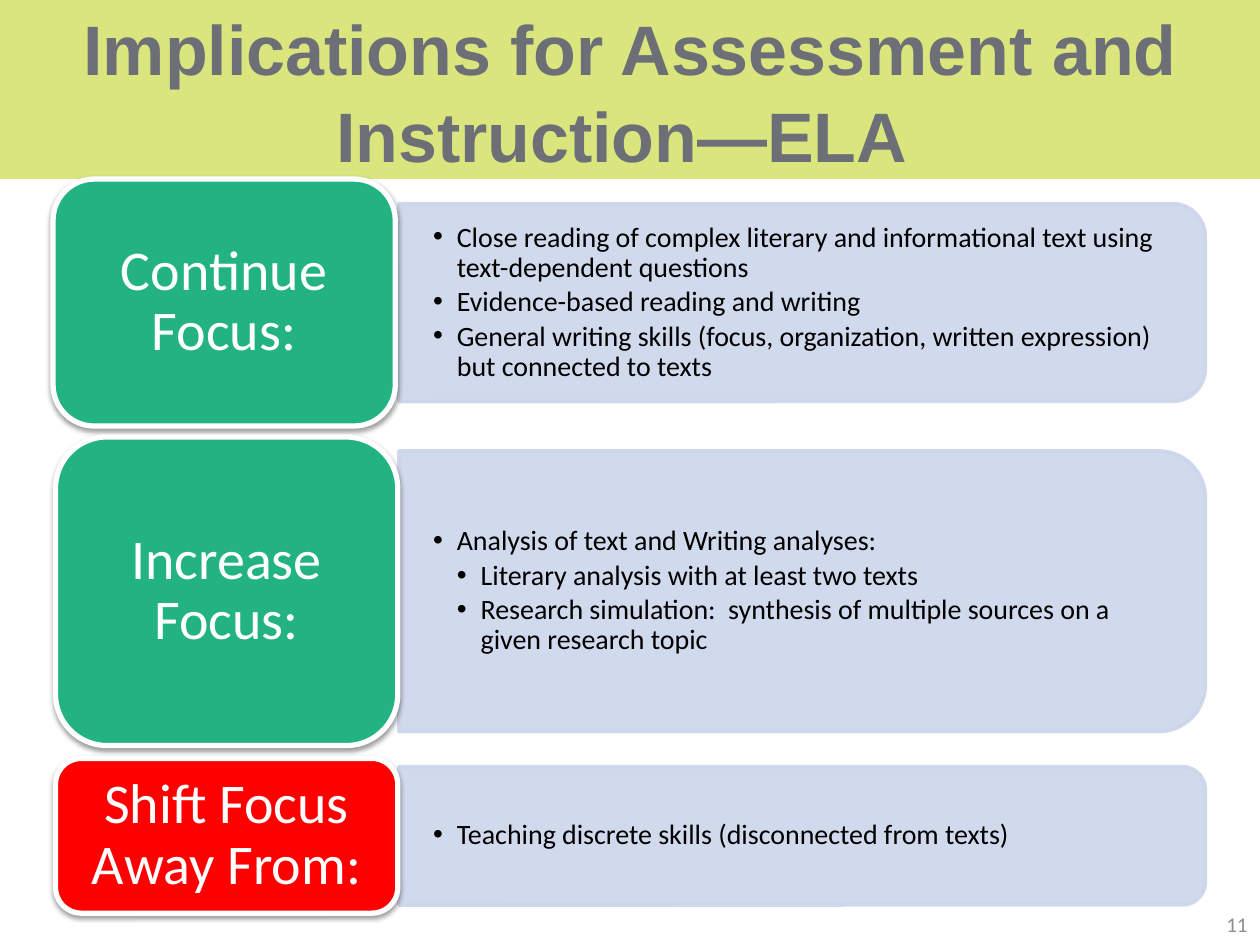
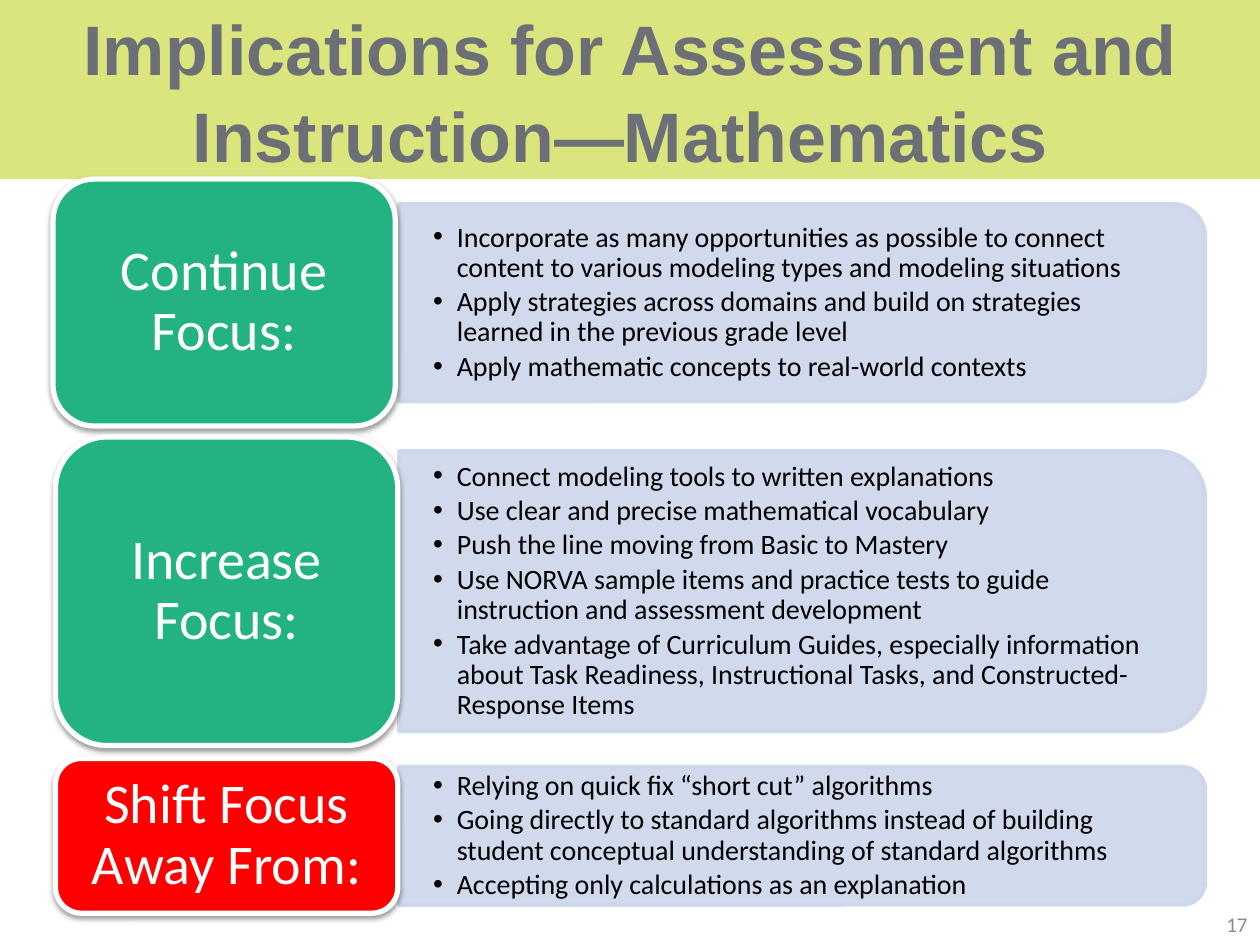
from lxml import etree
from pptx import Presentation
from pptx.dml.color import RGBColor
from pptx.enum.shapes import MSO_SHAPE
from pptx.enum.text import MSO_ANCHOR, MSO_AUTO_SIZE, PP_ALIGN
from pptx.oxml.ns import qn
from pptx.util import Cm, Pt

RECTANGLE = MSO_SHAPE.RECTANGLE
ROUNDED = MSO_SHAPE.ROUNDED_RECTANGLE
TOP_ROUNDED = MSO_SHAPE.ROUND_2_SAME_RECTANGLE
MIDDLE = MSO_ANCHOR.MIDDLE
NO_AUTOFIT = MSO_AUTO_SIZE.NONE
CENTER, RIGHT, LEFT = PP_ALIGN.CENTER, PP_ALIGN.RIGHT, PP_ALIGN.LEFT

COLORS = {
    "band": "DAE57E", "title": "6D6F77", "number": "8C8C8C", "panel": "CCD5EA",
    "keep": "23B383", "drop": "FF0000", "white": "FFFFFF", "black": "000000",
}
FONTS = {
    "title": {"name": "Arial", "size": Pt(40), "bold": True, "color": "title"},
    "number": {"name": "Calibri", "size": Pt(12), "bold": False, "color": "number"},
    "card": {"name": "Calibri", "size": Pt(32), "bold": False, "color": "white"},
    "bullet": {"name": "Calibri", "size": Pt(16), "bold": False, "color": "black"},
}
PARAGRAPHS = {
    "title": {"alignment": CENTER, "line_spacing": 1.04},
    "number": {"alignment": RIGHT},
    "card": {"alignment": CENTER, "line_spacing": 0.9},
    "bullet": {"alignment": LEFT, "line_spacing": 0.9, "space_after": Pt(2.4)},
}

SLIDE_WIDTH, SLIDE_HEIGHT = 25.4, 19.05
TITLE_BOX = (0, 0, SLIDE_WIDTH, 3.61)
NUMBER_BOX = (19.48, 18.21, 5.92, 0.84)
CARD_WIDTH, PANEL_WIDTH = 6.9, 16.26
CORNER_INSET = 0.05
BULLET_INDENT = 0.48

ROWS = [
    {"label": "Continue Focus:", "color": "keep", "box": (1.07, 3.61, 23.23, 4.98), "panel_height": 3.99},
    {"label": "Increase Focus:", "color": "keep", "box": (1.12, 8.81, 23.18, 6.22), "panel_height": 5.66},
    {"label": "Shift Focus Away From:", "color": "drop", "box": (1.12, 15.29, 23.18, 3.12), "panel_height": 2.79},
]

SLIDES = [
    {
        "title": "Implications for Assessment and Instruction—ELA ",
        "number": "11",
        "bullets": [
            [
                (1, "Close reading of complex literary and informational text using text-dependent questions"),
                (1, "Evidence-based reading and writing"),
                (1, "General writing skills (focus, organization, written expression) but connected to texts"),
            ],
            [
                (1, "Analysis of text and Writing analyses:"),
                (2, "Literary analysis with at least two texts"),
                (2, "Research simulation:  synthesis of multiple sources on a given research topic"),
            ],
            [(1, "Teaching discrete skills (disconnected from texts)")],
        ],
    },
    {
        "title": "Implications for Assessment and Instruction—Mathematics ",
        "number": "17",
        "bullets": [
            [
                (1, "Incorporate as many opportunities as possible to connect content to various "
                    "modeling types and modeling situations"),
                (1, "Apply strategies across domains and build on strategies learned in the previous grade level"),
                (1, "Apply mathematic concepts to real-world contexts"),
            ],
            [
                (1, "Connect modeling tools to written explanations"),
                (1, "Use clear and precise mathematical vocabulary"),
                (1, "Push the line moving from Basic to Mastery"),
                (1, "Use NORVA sample items and practice tests to guide instruction and assessment development"),
                (1, "Take advantage of Curriculum Guides, especially information about Task Readiness, "
                    "Instructional Tasks, and Constructed-Response Items"),
            ],
            [
                (1, "Relying on quick fix “short cut” algorithms"),
                (1, "Going directly to standard algorithms instead of building student conceptual "
                    "understanding of standard algorithms"),
                (1, "Accepting only calculations as an explanation"),
            ],
        ],
    },
]


def rgb(name):
    return RGBColor.from_string(COLORS[name])


def to_cm(box):
    return [Cm(value) for value in box]


def set_attributes(target, values):
    for name, value in values.items():
        setattr(target, name, value)


def add_xml(parent, tag, **attributes):
    return etree.SubElement(parent, qn(tag), attributes)


def write_paragraph(paragraph, text, style):
    set_attributes(paragraph, PARAGRAPHS[style])
    run = paragraph.add_run()
    run.text = text
    font = dict(FONTS[style])
    run.font.color.rgb = rgb(font.pop("color"))
    set_attributes(run.font, font)


def format_frame(frame, inset_x=0.25, inset_y=0.13):
    set_attributes(frame, {
        "word_wrap": True, "auto_size": NO_AUTOFIT, "vertical_anchor": MIDDLE,
        "margin_left": Cm(inset_x), "margin_right": Cm(inset_x),
        "margin_top": Cm(inset_y), "margin_bottom": Cm(inset_y),
    })


def add_filled_shape(slide, kind, box, fill, line=None, line_width=0):
    shape = slide.shapes.add_shape(kind, *to_cm(box))
    shape.shadow.inherit = False
    shape.fill.solid()
    shape.fill.fore_color.rgb = rgb(fill)
    if line:
        shape.line.color.rgb = rgb(line)
        shape.line.width = Pt(line_width)
    else:
        shape.line.fill.background()
    return shape


def add_layout_band(slide):
    band = add_filled_shape(slide, RECTANGLE, TITLE_BOX, "band")
    slide.slide_layout.shapes.element.insert(2, band.element)


def place_title(slide, text, box):
    title = slide.shapes.title
    set_attributes(title, dict(zip(("left", "top", "width", "height"), to_cm(box))))
    format_frame(title.text_frame)
    write_paragraph(title.text_frame.paragraphs[0], text, "title")


def add_slide_number(slide, text, box):
    number = slide.shapes.add_textbox(*to_cm(box))
    format_frame(number.text_frame)
    write_paragraph(number.text_frame.paragraphs[0], text, "number")


def add_panel(slide, box):
    left, top, width, height = box
    upright = (left + (width - height) / 2, top + (height - width) / 2, height, width)
    panel = add_filled_shape(slide, TOP_ROUNDED, upright, "panel", "panel", 2)
    panel.rotation = 90
    for color in list(panel.element.spPr.iter(qn("a:srgbClr"))):
        add_xml(color, "a:alpha", val="90000")


def add_bullets(slide, bullets, box):
    left, top, width, height = box
    inset = height * CORNER_INSET
    text_box = slide.shapes.add_textbox(*to_cm((left, top + inset, width - inset, height - 2 * inset)))
    frame = text_box.text_frame
    format_frame(frame, 0.69, 0.36)
    for index, (level, text) in enumerate(bullets):
        paragraph = frame.add_paragraph() if index else frame.paragraphs[0]
        write_paragraph(paragraph, text, "bullet")
        paragraph.level = level
        properties = paragraph._p.get_or_add_pPr()
        properties.set("marL", str(Cm(BULLET_INDENT * level)))
        properties.set("indent", str(-Cm(BULLET_INDENT)))
        add_xml(properties, "a:buFont", typeface="Arial")
        add_xml(properties, "a:buChar", char="•")


def add_card(slide, label, color, box):
    card = add_filled_shape(slide, ROUNDED, box, color, "white", 3)
    effects = card.element.spPr.find(qn("a:effectLst"))
    shadow = add_xml(effects, "a:outerShdw", blurRad=str(Pt(3.1)), dist=str(Pt(1.6)),
                     dir="5400000", rotWithShape="0")
    shadow_color = add_xml(shadow, "a:srgbClr", val=COLORS["black"])
    add_xml(shadow_color, "a:alpha", val="38000")
    format_frame(card.text_frame, 0.33, 0.18)
    write_paragraph(card.text_frame.paragraphs[0], label, "card")


def add_focus_row(slide, row, bullets):
    left, top, width, height = row["box"]
    panel_height = row["panel_height"]
    panel_box = (left + width - PANEL_WIDTH, top + (height - panel_height) / 2, PANEL_WIDTH, panel_height)
    add_panel(slide, panel_box)
    add_bullets(slide, bullets, panel_box)
    add_card(slide, row["label"], row["color"], (left, top, CARD_WIDTH, height))


def add_focus_slide(presentation, layout, content):
    slide = presentation.slides.add_slide(layout)
    place_title(slide, content["title"], TITLE_BOX)
    add_slide_number(slide, content["number"], NUMBER_BOX)
    for row, bullets in zip(ROWS, content["bullets"]):
        add_focus_row(slide, row, bullets)
    return slide


def main():
    presentation = Presentation()
    presentation.slide_width = Cm(SLIDE_WIDTH)
    presentation.slide_height = Cm(SLIDE_HEIGHT)
    layout = presentation.slide_layouts.get_by_name("Title Only")
    slides = [add_focus_slide(presentation, layout, content) for content in SLIDES]
    add_layout_band(slides[0])
    presentation.save("out.pptx")


if __name__ == "__main__":
    main()
